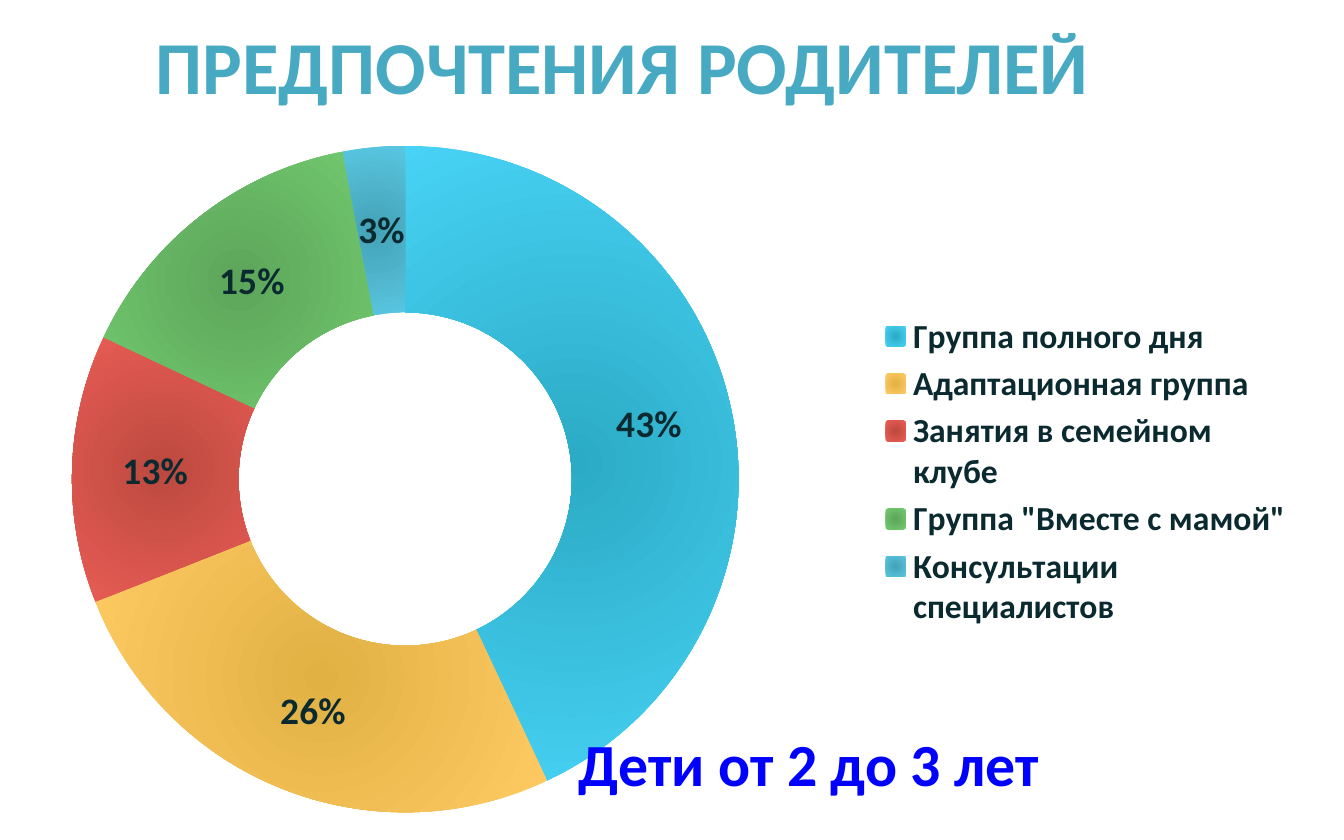
from typing import NamedTuple

from lxml import etree
from pptx import Presentation
from pptx.chart.data import CategoryChartData
from pptx.dml.color import RGBColor
from pptx.enum.chart import XL_CHART_TYPE, XL_LEGEND_POSITION
from pptx.enum.text import MSO_ANCHOR, MSO_AUTO_SIZE, PP_ALIGN
from pptx.oxml.ns import qn
from pptx.util import Inches, Pt

DOUGHNUT = XL_CHART_TYPE.DOUGHNUT
LEGEND_RIGHT = XL_LEGEND_POSITION.RIGHT
LEFT, CENTER = PP_ALIGN.LEFT, PP_ALIGN.CENTER
TOP, MIDDLE = MSO_ANCHOR.TOP, MSO_ANCHOR.MIDDLE
FONT = "Calibri"
DARK = "0A2A30"


class Share(NamedTuple):
    name: str
    value: float
    inner: str
    outer: str


SHARES = [
    Share("Группа полного дня", 0.43, "2BABC5", "48D2F5"),
    Share("Адаптационная группа", 0.26, "E1B144", "FFCA63"),
    Share("Занятия в семейном клубе", 0.13, "BC493F", "E95D55"),
    Share('Группа "Вместе с мамой"', 0.15, "5DA55A", "72CA6F"),
    Share("Консультации специалистов", 0.03, "44A2B6", "59C6E1"),
]


def rgb(value: str) -> RGBColor:
    return RGBColor.from_string(value)


def set_font(font, size: float, color: str, bold: bool = True, name: str = FONT) -> None:
    font.name, font.size, font.bold = name, Pt(size), bold
    font.color.rgb = rgb(color)


def place(shape, left: float, top: float, width: float, height: float) -> None:
    shape.left, shape.top = Inches(left), Inches(top)
    shape.width, shape.height = Inches(width), Inches(height)


def write(shape, text: str, *, size: float, color: str, align=LEFT, anchor=TOP,
          spacing: float = 1.0) -> None:
    tf = shape.text_frame
    tf.word_wrap = True
    tf.auto_size = MSO_AUTO_SIZE.NONE
    tf.vertical_anchor = anchor
    p = tf.paragraphs[0]
    p.alignment, p.line_spacing = align, spacing
    r = p.add_run()
    r.text = text
    set_font(r.font, size, color)


def set_plot_layout(chart, x: float, y: float, w: float, h: float) -> None:
    """Fix the inner plot area, in fractions of the chart."""
    area = chart._chartSpace.find(".//" + qn("c:plotArea"))
    for old in area.findall(qn("c:layout")):
        area.remove(old)
    layout = etree.Element(qn("c:layout"))
    manual = etree.SubElement(layout, qn("c:manualLayout"))
    settings = {"layoutTarget": "inner", "xMode": "edge", "yMode": "edge",
                "x": x, "y": y, "w": w, "h": h}
    for tag, value in settings.items():
        etree.SubElement(manual, qn(f"c:{tag}"), val=str(value))
    area.insert(0, layout)


def make_gradients_radial(chart) -> None:
    for lin in list(chart._chartSpace.iter(qn("a:lin"))):
        path = etree.Element(qn("a:path"), {"path": "circle"})
        etree.SubElement(path, qn("a:fillToRect"), {side: "100000" for side in "ltrb"})
        lin.getparent().replace(lin, path)


def add_doughnut(s, shares: list[Share]) -> None:
    data = CategoryChartData(number_format="0%")
    data.categories = [share.name for share in shares]
    data.add_series("Series 1", [share.value for share in shares])
    chart = s.shapes.add_chart(DOUGHNUT, Inches(0.28), Inches(0.88),
                               Inches(9.45), Inches(5.26), data).chart
    chart.has_title = False
    set_font(chart.font, 10, DARK, bold=False, name="Open Sans")
    chart.has_legend = True
    chart.legend.position = LEGEND_RIGHT
    chart.legend.include_in_layout = False
    set_font(chart.legend.font, 18, DARK)

    plot = chart.plots[0]
    plot.vary_by_categories = True
    plot.has_data_labels = True
    labels = plot.data_labels
    labels.show_value, labels.show_percentage = True, False
    labels.number_format, labels.number_format_is_linked = "0%", False
    set_font(labels.font, 20, DARK)

    for i, share in enumerate(shares):
        fill = plot.series[0].points[i].format.fill
        fill.gradient()
        for stop, color in zip(fill.gradient_stops, (share.inner, share.outer)):
            stop.color.rgb = rgb(color)
    make_gradients_radial(chart)
    set_plot_layout(chart, 0.027, 0.039, 0.525, 0.943)


def main() -> None:
    prs = Presentation()
    prs.slide_width, prs.slide_height = Inches(10), Inches(6.25)
    s = prs.slides.add_slide(prs.slide_layouts.get_by_name("Title Only"))

    add_doughnut(s, SHARES)

    title = s.shapes.title
    place(title, 1.06, 0.21, 7.97, 0.67)
    write(title, "ПРЕДПОЧТЕНИЯ РОДИТЕЛЕЙ", size=40, color="48AAC2",
          anchor=MIDDLE, spacing=0.8)

    age = s.shapes.add_textbox(Inches(2.32), Inches(5.36), Inches(7.4), Inches(0.79))
    write(age, "Дети от 2 до 3 лет", size=32, color="0000FF", align=CENTER)

    prs.save("out.pptx")


if __name__ == "__main__":
    main()
